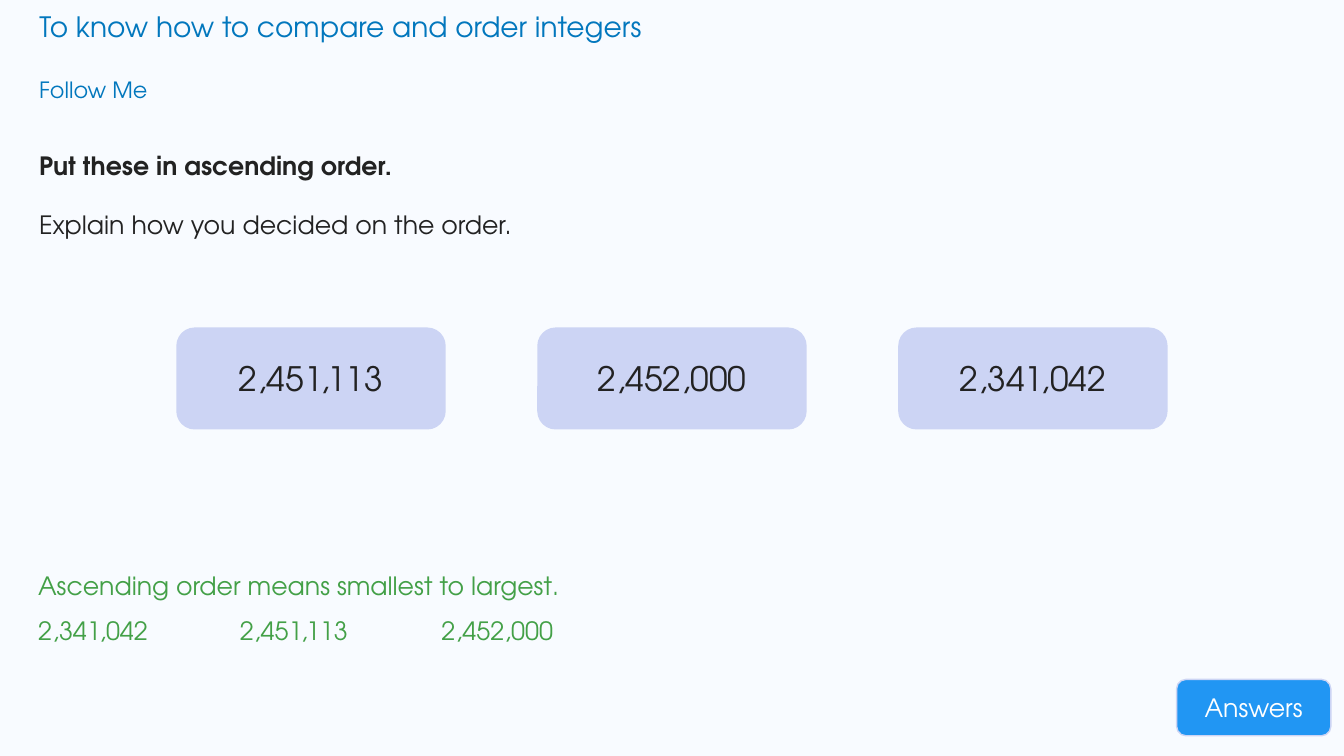
from lxml import etree
from pptx import Presentation
from pptx.dml.color import RGBColor
from pptx.enum.shapes import MSO_SHAPE
from pptx.enum.text import MSO_ANCHOR, MSO_AUTO_SIZE, PP_ALIGN
from pptx.oxml.ns import qn
from pptx.util import Inches, Pt

COLORS = {
    "background": "F8FBFF",
    "heading": "0277BD",
    "body": "222222",
    "answer": "43A047",
    "card": "CCD4F4",
    "button": "2196F3",
    "white": "FFFFFF",
}


class LessonPage:
    font_name = "TeX Gyre Adventor"

    def __init__(self, deck):
        self.page = deck.slides.add_slide(deck.slide_layouts[5])
        self.paint(self.page.background.fill, "background")

    def paint(self, fill, color):
        fill.solid()
        fill.fore_color.rgb = RGBColor.from_string(COLORS[color])

    def set_text(self, shape, text, size, color, align=PP_ALIGN.LEFT,
                 anchor=MSO_ANCHOR.TOP, spacing=1.0, gap=0):
        frame = shape.text_frame
        frame.word_wrap = True
        frame.auto_size = MSO_AUTO_SIZE.NONE
        frame.vertical_anchor = anchor
        frame.text = text
        for index, para in enumerate(frame.paragraphs):
            para.alignment = align
            para.line_spacing = spacing
            para.space_before = Pt(gap if index else 0)
            for span in para.runs:
                span.font.name = self.font_name
                span.font.size = Pt(size)
                span.font.color.rgb = RGBColor.from_string(COLORS[color])

    def title(self, left, top, width, height, text, size, color):
        box = self.page.shapes.title
        box.left, box.top = Inches(left), Inches(top)
        box.width, box.height = Inches(width), Inches(height)
        self.set_text(box, text, size, color)

    def text(self, left, top, width, height, text, size, color, **style):
        box = self.page.shapes.add_textbox(
            Inches(left), Inches(top), Inches(width), Inches(height))
        self.set_text(box, text, size, color, **style)
        return box.text_frame.paragraphs

    def rounded(self, left, top, width, height, text, size, color, fill, line_width):
        box = self.page.shapes.add_shape(
            MSO_SHAPE.ROUNDED_RECTANGLE,
            Inches(left), Inches(top), Inches(width), Inches(height))
        box.shadow.inherit = False
        self.paint(box.fill, fill)
        self.paint(box.line.fill, "card")
        box.line.width = Pt(line_width)
        self.set_text(box, text, size, color, PP_ALIGN.CENTER, MSO_ANCHOR.MIDDLE)

    def tab_stops(self, para, positions):
        tabs = etree.Element(qn("a:tabLst"))
        for position in positions:
            etree.SubElement(tabs, qn("a:tab"), pos=str(Inches(position)), algn="l")
        para._p.get_or_add_pPr().append(tabs)


def main():
    deck = Presentation()
    deck.slide_width, deck.slide_height = Inches(13.33), Inches(7.5)
    lesson = LessonPage(deck)

    # Headings
    lesson.title(0.29, 0.04, 12.34, 0.44,
                 "To know how to compare and order integers", 20, "heading")
    lesson.text(0.29, 0.71, 2.97, 0.46, "Follow Me", 16, "heading")

    # Task
    task = lesson.text(
        0.29, 1.29, 12.84, 1.23,
        "Put these in ascending order.\nExplain how you decided on the order.",
        18, "body", spacing=1.5, gap=10)
    task[0].runs[0].font.bold = True

    # Number cards
    for column, number in enumerate(["2,451,113", "2,452,000", "2,341,042"]):
        lesson.rounded(1.77 + 3.58 * column, 3.27, 2.63, 0.97,
                       number, 24, "body", "card", 3)

    # Answer
    answer = lesson.text(
        0.28, 5.46, 11.17, 0.95,
        "Ascending order means smallest to largest.\n2,341,042\t2,451,113\t2,452,000",
        18, "answer", spacing=1.5)
    lesson.tab_stops(answer[1], [2, 4])

    # Answers button
    lesson.rounded(11.67, 6.74, 1.53, 0.56, "Answers", 18, "white", "button", 1)

    deck.save("out.pptx")


if __name__ == "__main__":
    main()
